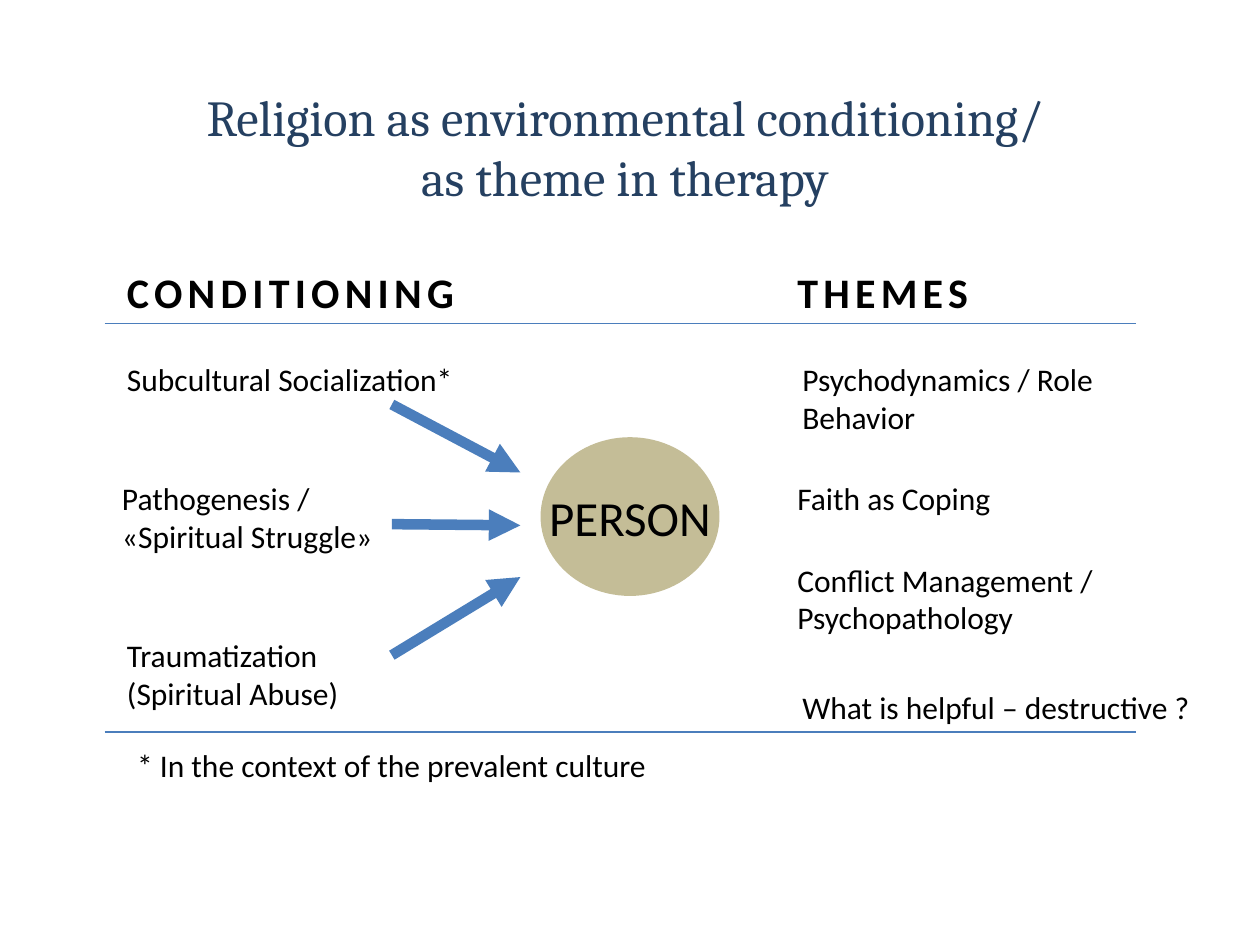
from lxml import etree
from pptx import Presentation
from pptx import util as u
from pptx.dml.color import RGBColor
from pptx.enum import shapes, text
from pptx.oxml.ns import qn

BLACK, NAVY, BLUE, SAND = "000000", "254061", "4B7EBC", "C4BD97"


def colour(value):
    return RGBColor.from_string(value)


class Page:
    def __init__(self, slide):
        self.shapes = slide.shapes

    def style(self, frame, lines, size, font="Calibri", ink=BLACK, bold=None,
              align=text.PP_ALIGN.LEFT, tracking=None):
        for index, line in enumerate(lines):
            paragraph = frame.paragraphs[0] if index == 0 else frame.add_paragraph()
            paragraph.text = line
            paragraph.alignment = align
            paragraph.font.size = u.Pt(size)
            paragraph.font.name = font
            paragraph.font.bold = bold
            paragraph.font.color.rgb = colour(ink)
            if tracking:
                paragraph.font._element.set("spc", str(tracking * 100))

    def label(self, left, top, width, height, *lines, size=18,
              anchor=text.MSO_ANCHOR.TOP, **look):
        box = self.shapes.add_textbox(*map(u.Inches, (left, top, width, height)))
        frame = box.text_frame
        frame.word_wrap = True
        frame.vertical_anchor = anchor
        self.style(frame, lines, size, **look)

    def heading(self, left, top, width, wording):
        self.label(left, top, width, 0.5, wording, size=24, bold=True, tracking=3)

    def ellipse(self, left, top, width, height, wording):
        oval = self.shapes.add_shape(shapes.MSO_SHAPE.OVAL,
                                     *map(u.Inches, (left, top, width, height)))
        oval.shadow.inherit = False
        oval.fill.solid()
        oval.fill.fore_color.rgb = colour(SAND)
        oval.line.fill.background()
        oval.text_frame.word_wrap = False
        oval.text_frame.vertical_anchor = text.MSO_ANCHOR.MIDDLE
        self.style(oval.text_frame, [wording], 28, align=text.PP_ALIGN.CENTER)

    def line(self, x1, y1, x2, y2, weight=0.75, arrow=False):
        rule = self.shapes.add_connector(shapes.MSO_CONNECTOR.STRAIGHT,
                                         *map(u.Inches, (x1, y1, x2, y2)))
        rule.line.width = u.Pt(weight)
        rule.line.color.rgb = colour(BLUE)
        if arrow:
            etree.SubElement(rule.line._get_or_add_ln(), qn("a:tailEnd"), type="triangle")
        etree.SubElement(rule._element.spPr, qn("a:effectLst"))


def main():
    deck = Presentation()
    deck.slide_width, deck.slide_height = u.Inches(10), u.Inches(7.5)
    page = Page(deck.slides.add_slide(deck.slide_layouts[6]))

    page.label(0.46, 0.71, 9, 0.9,
               "Religion as environmental conditioning/\nas theme in therapy",
               size=28.8, font="Cambria", ink=NAVY,
               anchor=text.MSO_ANCHOR.MIDDLE, align=text.PP_ALIGN.CENTER)
    page.ellipse(4.29, 3.47, 1.42, 1.26, "PERSON")
    page.heading(0.91, 2.07, 3.46, "CONDITIONING")
    page.heading(6.23, 2.07, 3.7, "THEMES")

    page.label(0.91, 2.81, 3.23, 0.4, "Subcultural Socialization*")
    page.label(0.87, 3.75, 3.23, 0.71, "Pathogenesis / \n«Spiritual Struggle»")
    page.label(0.91, 5, 3.23, 0.71, "Traumatization", "(Spiritual Abuse)")

    page.label(6.27, 2.81, 3.23, 0.71, "Psychodynamics / Role Behavior")
    page.label(6.23, 3.75, 3.23, 0.4, "Faith as Coping")
    page.label(6.23, 4.4, 3.23, 0.71, "Conflict Management / Psychopathology")
    page.label(6.27, 5.41, 3.46, 0.4, "What is helpful – destructive ?")

    for start, end in ((3.21, 3.75), (4.16, 4.17), (5.2, 4.58)):
        page.line(3.11, start, 4.13, end, weight=6, arrow=True)
    for height in (2.57, 5.81):
        page.line(0.83, height, 9.02, height)
    page.label(0.99, 5.87, 4.25, 0.71, "* In the context of the prevalent culture")

    deck.save("out.pptx")


if __name__ == "__main__":
    main()
